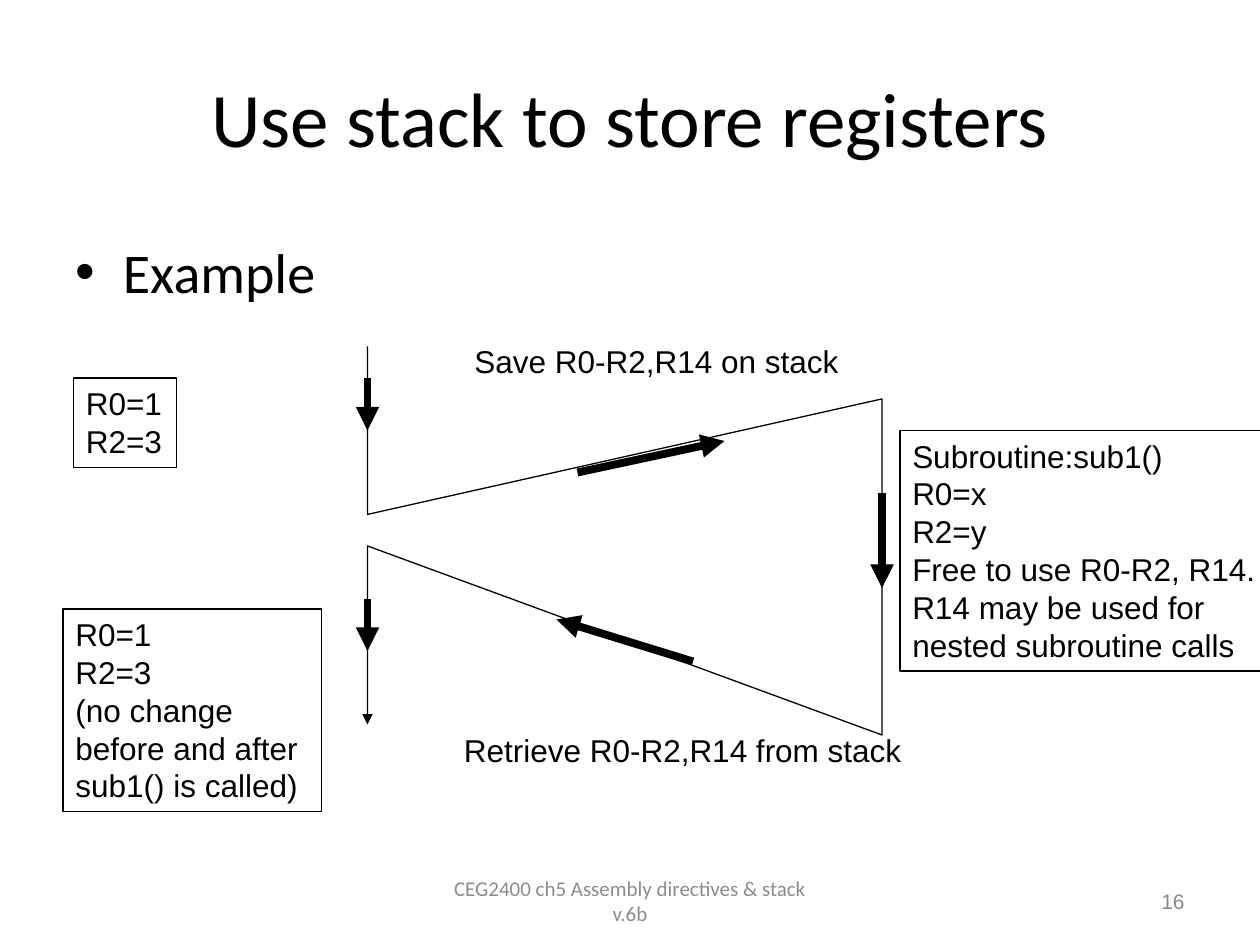
"""Build the slide on saving registers on the stack around a subroutine call."""
from lxml.etree import SubElement
from pptx import Presentation
from pptx.dml.color import RGBColor
from pptx.enum.shapes import MSO_CONNECTOR, MSO_SHAPE
from pptx.enum.text import MSO_ANCHOR, MSO_AUTO_SIZE, PP_ALIGN
from pptx.oxml.ns import qn
from pptx.util import Inches, Pt

COLORS = {"ink": "000000", "footer": "8C8C8C", "number": "898989"}
UNIT = Inches(1) // 12

TITLE = ("Use stack to store registers", (6, 3.6, 108, 15))
BODY = ("Example", (6, 22, 108, 59.4))
FOOTERS = [
    ("CEG2400 ch5 Assembly directives & stack v.6b", (41, 83.4, 38, 4.8),
     "Calibri", "footer", PP_ALIGN.CENTER),
    ("16", (86, 83.4, 28, 4.8), "Arial", "number", PP_ALIGN.RIGHT),
]
FLOW = [(35, 33), (35, 49), (84, 38), (84, 70), (35, 52), (35, 69)]
LABELS = [
    ("Save R0-R2,R14 on stack", (44, 32, 37.9, 4.8)),
    ("Retrieve R0-R2,R14 from stack", (43, 69, 44.9, 4.8)),
]
ARROWS = [
    ((84, 47), (84, 56)),
    ((35, 36), (35, 41)),
    ((35, 57), (35, 62)),
    ((55, 45), (69, 42)),
    ((66, 63), (53, 59)),
]
REGISTERS = ["R0=1", "R2=3"]
BOXES = [
    (REGISTERS, (7, 36, 9.8, 8.5)),
    (REGISTERS + ["(no change", "before and after", "sub1() is called)"],
     (6, 58, 24.6, 19.3)),
    (["Subroutine:sub1()", "R0=x", "R2=y", "Free to use R0-R2, R14.",
      "R14 may be used for", "nested subroutine calls"],
     (85.7, 41, 35.2, 22.9)),
]


def grid(cells):
    return [round(n * UNIT) for n in cells]


def color(name):
    return RGBColor.from_string(COLORS[name])


def style(tf, size, font="Arial", ink="ink", align=PP_ALIGN.LEFT):
    for p in tf.paragraphs:
        p.alignment = align
        p.font.size, p.font.name = Pt(size), font
        p.font.color.rgb = color(ink)


def outline(sp, width, arrow=False):
    sp.line.color.rgb = color("ink")
    sp.line.width = Pt(width)
    if arrow:
        SubElement(sp.element.spPr.find(qn("a:ln")), qn("a:tailEnd"), type="triangle")


def fit_text(sp, lines):
    tf = sp.text_frame
    tf.text = "\n".join(lines)
    tf.word_wrap = False
    tf.auto_size = MSO_AUTO_SIZE.SHAPE_TO_FIT_TEXT
    tf.vertical_anchor = MSO_ANCHOR.TOP
    style(tf, 18)


def fill_placeholder(sp, content, size, align):
    text, cells = content
    sp.left, sp.top, sp.width, sp.height = grid(cells)
    sp.text_frame.text = text
    style(sp.text_frame, size, "Calibri", align=align)


def main():
    prs = Presentation()
    prs.slide_width, prs.slide_height = grid((120, 90))
    s = prs.slides.add_slide(prs.slide_layouts[1])
    fill_placeholder(s.shapes.title, TITLE, 44, PP_ALIGN.CENTER)
    fill_placeholder(s.placeholders[1], BODY, 32, PP_ALIGN.LEFT)

    for text, cells, font, ink, align in FOOTERS:
        tf = s.shapes.add_textbox(*grid(cells)).text_frame
        tf.text = text
        tf.word_wrap = True
        tf.vertical_anchor = MSO_ANCHOR.MIDDLE
        style(tf, 12, font, ink, align)

    path = s.shapes.build_freeform(*FLOW[0], scale=UNIT)
    path.add_line_segments(FLOW[1:], close=False)
    sp = path.convert_to_shape()
    sp.fill.background()
    sp.shadow.inherit = False
    outline(sp, 0.75, arrow=True)

    for text, cells in LABELS:
        fit_text(s.shapes.add_textbox(*grid(cells)), [text])

    for start, end in ARROWS:
        sp = s.shapes.add_connector(MSO_CONNECTOR.STRAIGHT, *grid(start + end))
        outline(sp, 4.5, arrow=True)
        SubElement(sp.element.spPr, qn("a:effectLst"))

    for lines, cells in BOXES:
        sp = s.shapes.add_shape(MSO_SHAPE.RECTANGLE, *grid(cells))
        sp.fill.background()
        sp.shadow.inherit = False
        outline(sp, 0.75)
        fit_text(sp, lines)

    prs.save("out.pptx")


if __name__ == "__main__":
    main()
